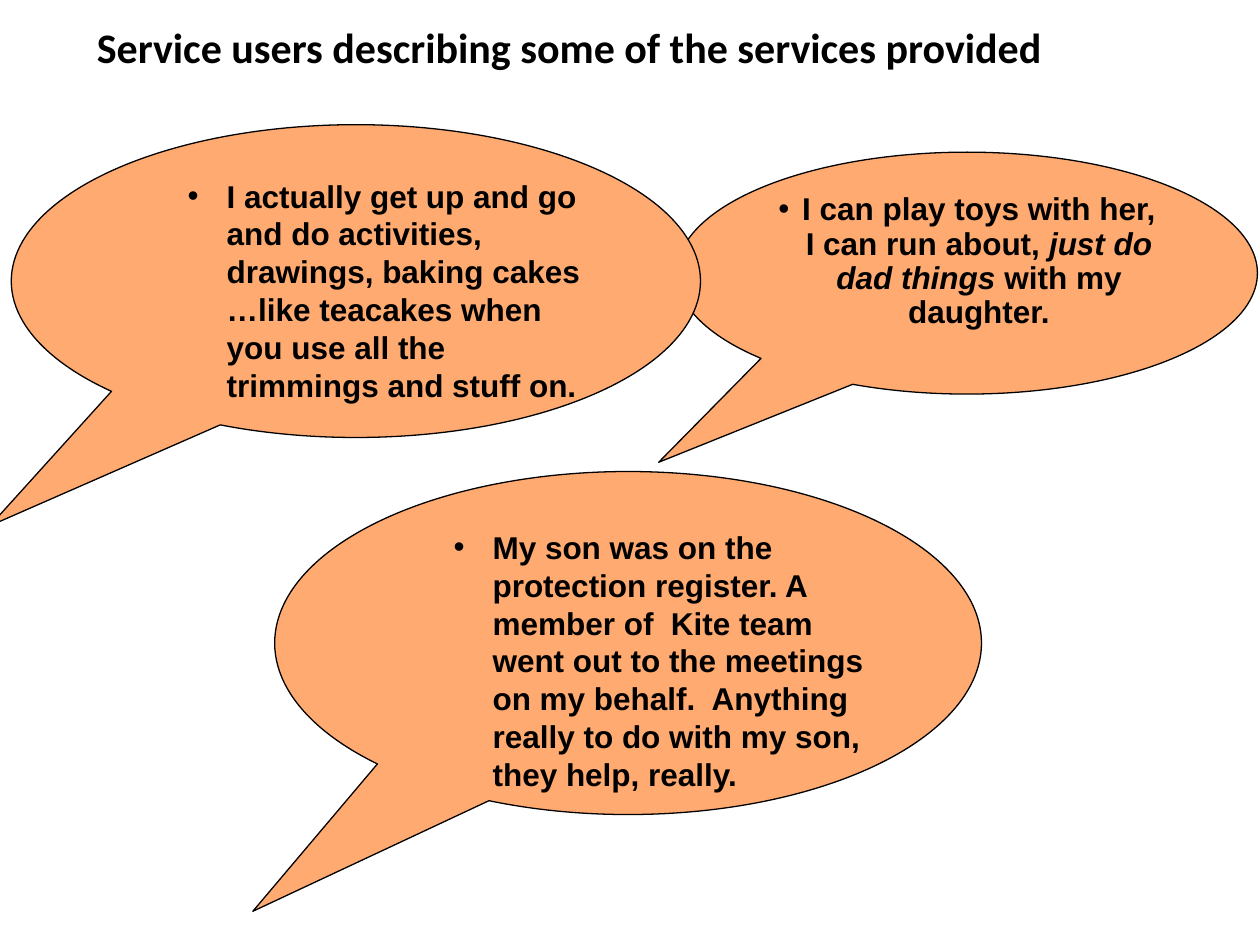
from lxml import etree
from pptx import Presentation
from pptx.dml.color import RGBColor
from pptx.enum.shapes import MSO_SHAPE
from pptx.enum.text import MSO_ANCHOR, PP_ALIGN
from pptx.oxml.ns import qn
from pptx.util import Inches, Pt

WIDE, HIGH = Inches(10), Inches(7.5)
BUBBLE = MSO_SHAPE.OVAL_CALLOUT
TOP, MIDDLE = MSO_ANCHOR.TOP, MSO_ANCHOR.MIDDLE
LEFT, CENTER = PP_ALIGN.LEFT, PP_ALIGN.CENTER
TAIL = (-0.531, 0.782)
INK, PEACH = "000000", "FFAA71"

TITLE = "Service users describing some of the services provided"
QUOTES = [
    ((0.537, 0.161, 0.461, 0.256), CENTER, 0.19, 0.19, 0.9, 7.5,
     [("I can play toys with her, I can run about, ", False),
      ("just do dad things", True),
      (" with my daughter.", False)]),
    ((0.009, 0.132, 0.547, 0.331), LEFT, 0.81, 0.31, 1, 0,
     [("I actually get up and go and do activities, drawings, baking cakes "
       "…like teacakes when you use all the trimmings and stuff on.", False)]),
    ((0.218, 0.499, 0.561, 0.363), LEFT, 0.81, 0.31, 1, 0,
     [("My son was on the protection register. A member of  Kite team went "
       "out to the meetings on my behalf.  Anything really to do with my "
       "son, they help, really.", False)]),
]


def color(code):
    """Turn a hex string into a colour."""
    return RGBColor.from_string(code)


def place(box):
    """Turn shares of the slide into lengths."""
    return [round(part * side) for part, side in zip(box, (WIDE, HIGH) * 2)]


def add_run(para, text, face, size, slant=False):
    """Add one bold run to a paragraph."""
    run = para.add_run()
    run.text = text
    font = run.font
    font.name, font.size = face, Pt(size)
    font.bold, font.italic = True, slant
    font.color.rgb = color(INK)


def add_bullet(para, margin, hang):
    """Give a paragraph a hanging bullet."""
    props = para._p.get_or_add_pPr()
    props.set("marL", str(Inches(margin)))
    props.set("indent", str(-Inches(hang)))
    etree.SubElement(props, qn("a:buFont")).set("typeface", "Arial")
    etree.SubElement(props, qn("a:buChar")).set("char", "•")


def add_title(slide, box):
    """Write the heading in its box."""
    frame = slide.shapes.add_textbox(*place(box)).text_frame
    frame.word_wrap = True
    frame.vertical_anchor = MIDDLE
    para = frame.paragraphs[0]
    para.line_spacing = 0.9
    add_run(para, TITLE, "Calibri", 24)


def add_quote(slide, box, align, margin, hang, lead, before, runs):
    """Draw one speech bubble with its bulleted quote."""
    bubble = slide.shapes.add_shape(BUBBLE, *place(box))
    for index, value in enumerate(TAIL):
        bubble.adjustments[index] = value
    bubble.shadow.inherit = False
    bubble.fill.solid()
    bubble.fill.fore_color.rgb = color(PEACH)
    bubble.line.color.rgb = color(INK)
    bubble.line.width = Pt(0.75)
    frame = bubble.text_frame
    frame.word_wrap = True
    frame.vertical_anchor = TOP
    para = frame.paragraphs[0]
    para.alignment, para.level = align, 1
    para.line_spacing, para.space_before = lead, Pt(before)
    add_bullet(para, margin, hang)
    for text, slant in runs:
        add_run(para, text, "Arial", 18, slant)


def main():
    """Build and save the slide."""
    deck = Presentation()
    deck.slide_width, deck.slide_height = WIDE, HIGH
    slide = deck.slides.add_slide(deck.slide_layouts[6])
    add_title(slide, (0.067, 0.023, 0.862, 0.059))
    for quote in QUOTES:
        add_quote(slide, *quote)
    deck.save("out.pptx")


if __name__ == "__main__":
    main()
